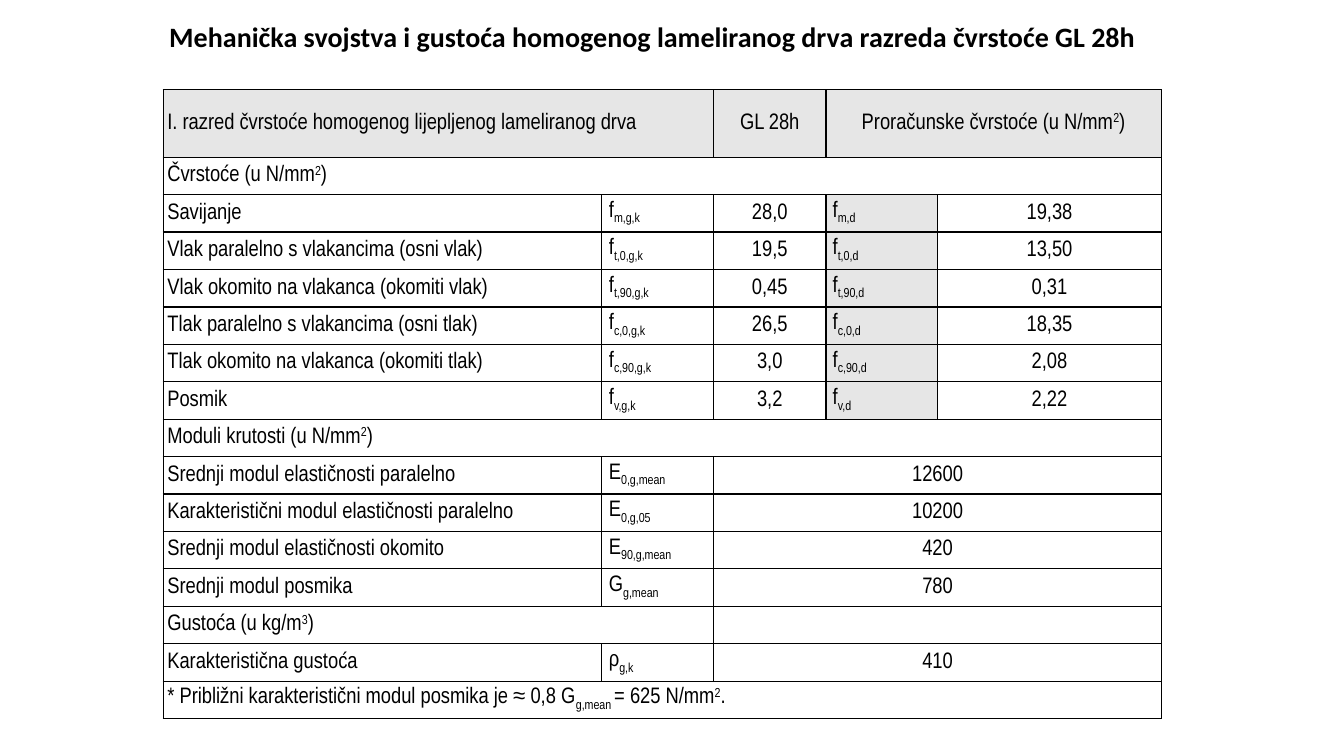
import pptx
import pptx.util
import pptx.dml.color
import pptx.enum.text
from lxml import etree

Inches, Pt = pptx.util.Inches, pptx.util.Pt
ALIGN = pptx.enum.text.PP_ALIGN
BLACK = pptx.dml.color.RGBColor(0x00, 0x00, 0x00)
GREY = pptx.dml.color.RGBColor(0xE6, 0xE6, 0xE6)
NS = "http://schemas.openxmlformats.org/drawingml/2006/main"
SHIFT = {"_": "-25000", "^": "30000"}

TITLE = "Mehanička svojstva i gustoća homogenog lameliranog drva razreda čvrstoće GL 28h"
WIDTHS = [4.35, 1.11, 1.11, 1.11, 2.22]
HEAD, STEP = 0.67, 0.3713
# None joins a cell to the one on its left; |_ starts a subscript, |^ a superscript.
ROWS = [
    ("I. razred čvrstoće homogenog lijepljenog lameliranog drva", None,
     "GL 28h", "Proračunske čvrstoće (u N/mm|^2|)", None),
    ("Čvrstoće (u N/mm|^2|)", None, None, None, None),
    ("Savijanje", "f|_m,g,k", "28,0", "f|_m,d", "19,38"),
    ("Vlak paralelno s vlakancima (osni vlak)", "f|_t,0,g,k", "19,5", "f|_t,0,d", "13,50"),
    ("Vlak okomito na vlakanca (okomiti vlak)", "f|_t,90,g,k", "0,45", "f|_t,90,d", "0,31"),
    ("Tlak paralelno s vlakancima (osni tlak)", "f|_c,0,g,k", "26,5", "f|_c,0,d", "18,35"),
    ("Tlak okomito na vlakanca (okomiti tlak)", "f|_c,90,g,k", "3,0", "f|_c,90,d", "2,08"),
    ("Posmik", "f|_v,g,k", "3,2", "f|_v,d", "2,22"),
    ("Moduli krutosti (u N/mm|^2|)", None, None, None, None),
    ("Srednji modul elastičnosti paralelno", "E|_0,g,mean", "12600", None, None),
    ("Karakteristični modul elastičnosti paralelno", "E|_0,g,05", "10200", None, None),
    ("Srednji modul elastičnosti okomito", "E|_90,g,mean", "420", None, None),
    ("Srednji modul posmika", "G|_g,mean", "780", None, None),
    ("Gustoća (u kg/m|^3|)", None, "", None, None),
    ("Karakteristična gustoća", "ρ|_g,k", "410", None, None),
    ("* Približni karakteristični modul posmika je ≈ 0,8 G|_g,mean |= 625 N/mm|^2|.",
     None, None, None, None),
]


def write(par, text, font, size, bold=False):
    """Fill a paragraph, raising or lowering the marked pieces."""
    par.font.name, par.font.size, par.font.bold = font, Pt(size), bold
    par.font.color.rgb = BLACK
    for piece in filter(None, text.split("|")):
        run = par.add_run()
        run.text = piece.lstrip("_^")
        if piece[0] in SHIFT:
            run._r.get_or_add_rPr().set("baseline", SHIFT[piece[0]])


def border(cell, thick):
    """Draw black cell sides, 1.5 pt for those in thick and 1 pt for the rest."""
    props = cell._tc.get_or_add_tcPr()
    for side in "LRTB":
        width = Pt(1.5 if side in thick else 1)
        line = etree.SubElement(props, f"{{{NS}}}ln{side}", w=str(int(width)))
        fill = etree.SubElement(line, f"{{{NS}}}solidFill")
        etree.SubElement(fill, f"{{{NS}}}srgbClr", val=str(BLACK))


deck = pptx.Presentation()
deck.slide_width, deck.slide_height = Inches(13.33), Inches(7.5)
slide = deck.slides.add_slide(deck.slide_layouts[6])

frame = slide.shapes.add_table(
    len(ROWS), len(WIDTHS), Inches(1.62), Inches(0.89),
    Inches(sum(WIDTHS)), Inches(HEAD + STEP * (len(ROWS) - 1)))
table = frame.table
table.first_row = table.horz_banding = False
for col, width in zip(table.columns, WIDTHS):
    col.width = Inches(width)
for r, row in enumerate(ROWS):
    table.rows[r].height = Inches(STEP if r else HEAD)
    for c, text in enumerate(row):
        cell = table.cell(r, c)
        split = row[3] is not None
        border(cell, {2: "R", 3: "L"}.get(c, "") if split else "")
        if r == 0 or (c == 3 and split):
            cell.fill.solid()
            cell.fill.fore_color.rgb = GREY
        else:
            cell.fill.background()
        cell.vertical_anchor = pptx.enum.text.MSO_ANCHOR.MIDDLE
        cell.margin_left = Inches(0.07 if c else 0.04)
        cell.margin_right = Inches(0.07 if c else 0.02)
        cell.margin_top = cell.margin_bottom = 0
        if text is None:
            continue
        par = cell.text_frame.paragraphs[0]
        if c in (2, 4) or (r == 0 and c):
            par.alignment = ALIGN.CENTER
        elif text.startswith("*"):
            par.alignment = ALIGN.JUSTIFY
        write(par, text, "Arial Narrow", 16)
        last = c
        while last + 1 < len(row) and row[last + 1] is None:
            last += 1
        if last > c:
            cell.merge(table.cell(r, last))

title = slide.shapes.add_textbox(Inches(1.58), Inches(0.14), Inches(10.22), Inches(0.44))
title.text_frame.word_wrap = True
title.text_frame.auto_size = pptx.enum.text.MSO_AUTO_SIZE.SHAPE_TO_FIT_TEXT
write(title.text_frame.paragraphs[0], TITLE, "Calibri", 20, True)

deck.save("out.pptx")
